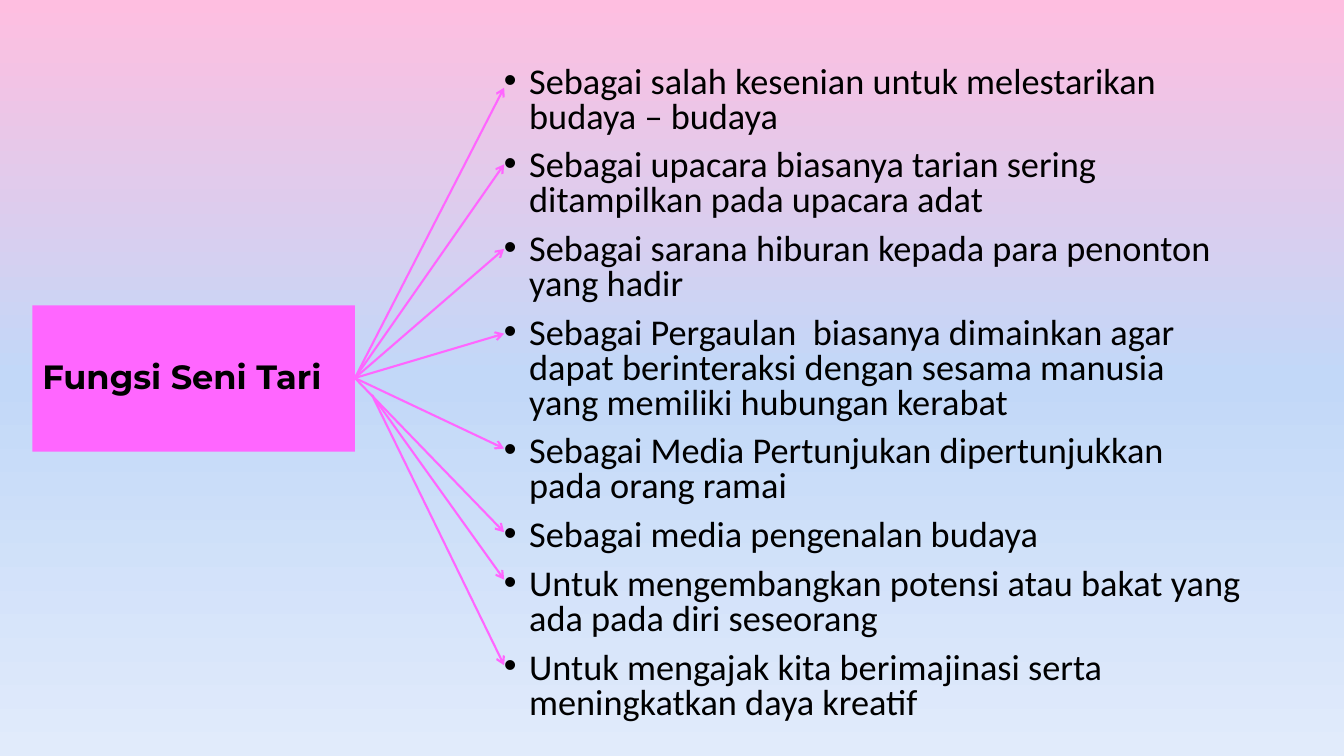
"""Build a slide that links a dance title to the list of its functions."""
import copy

import lxml.etree
import pptx
import pptx.dml.color
import pptx.enum.shapes
import pptx.enum.text
import pptx.oxml.ns
import pptx.util

PX = 9144
SLIDE_SIZE = (1333, 750)
TITLE_BOX = (32, 303, 320, 145)
LIST_BOX = (490, 61, 752, 672)

PINK = pptx.dml.color.RGBColor(0xFF, 0x66, 0xFF)
BLACK = pptx.dml.color.RGBColor(0x00, 0x00, 0x00)
BACKGROUND_STOPS = (
    (0, pptx.dml.color.RGBColor(0xFE, 0xBE, 0xE0)),
    (0.5, pptx.dml.color.RGBColor(0xC2, 0xD8, 0xF8)),
    (1, pptx.dml.color.RGBColor(0xE1, 0xEB, 0xFB)),
)

TITLE = "Fungsi Seni Tari"
FUNCTIONS = (
    "Sebagai salah kesenian untuk melestarikan budaya – budaya",
    "Sebagai upacara biasanya tarian sering ditampilkan pada upacara adat",
    "Sebagai sarana hiburan kepada para penonton yang hadir",
    "Sebagai Pergaulan  biasanya dimainkan agar dapat berinteraksi dengan "
    "sesama manusia yang memiliki hubungan kerabat",
    "Sebagai Media Pertunjukan dipertunjukkan pada orang ramai",
    "Sebagai media pengenalan budaya",
    "Untuk mengembangkan potensi atau bakat yang ada pada diri seseorang",
    "Untuk mengajak kita berimajinasi serta meningkatkan daya kreatif",
)
ARROW_END_X = 500
ARROW_END_YS = (87, 163, 247, 331, 445, 528, 575, 660)
LOWER_ARROWS = 2
LOWER_OFFSET = 17


def emu(*lengths):
    """Turn px lengths into EMU."""
    return [pptx.util.Emu(length * PX) for length in lengths]


def add_element(parent, tag, **attributes):
    """Append a drawing element with its attributes."""
    return lxml.etree.SubElement(parent, pptx.oxml.ns.qn(tag), attributes)


def style_run(run, font_name, size, bold=False):
    """Set the font of a run."""
    run.font.name = font_name
    run.font.size = pptx.util.Pt(size)
    run.font.bold = bold
    run.font.color.rgb = BLACK


def paint_background(slide):
    """Fill the slide with a vertical gradient of three colours."""
    fill = slide.background.fill
    fill.gradient()
    fill.gradient_angle = 270
    stop_list = slide.element.find(".//" + pptx.oxml.ns.qn("a:gsLst"))
    stop_list.append(copy.deepcopy(stop_list[-1]))
    for stop, (position, color) in zip(fill.gradient_stops, BACKGROUND_STOPS):
        stop.position = position
        stop.color.rgb = color


def place_title(slide, box):
    """Turn the title placeholder into the pink label."""
    shape = slide.shapes.title
    shape.left, shape.top, shape.width, shape.height = emu(*box)
    shape.fill.solid()
    shape.fill.fore_color.rgb = PINK
    text_frame = shape.text_frame
    text_frame.text = TITLE
    text_frame.vertical_anchor = pptx.enum.text.MSO_ANCHOR.MIDDLE
    paragraph = text_frame.paragraphs[0]
    paragraph.alignment = pptx.enum.text.PP_ALIGN.LEFT
    paragraph.line_spacing = 0.9
    style_run(paragraph.runs[0], "Montserrat", 24, bold=True)


def add_function_list(slide, box):
    """Add the bulleted list of functions."""
    text_frame = slide.shapes.add_textbox(*emu(*box)).text_frame
    text_frame.word_wrap = True
    text_frame.text = "\n".join(FUNCTIONS)
    indent = 25 * PX
    for paragraph in text_frame.paragraphs:
        paragraph.line_spacing = 0.8
        paragraph.space_before = pptx.util.Pt(10)
        style_run(paragraph.runs[0], "Calibri", 25.9)
        properties = paragraph._p.get_or_add_pPr()
        properties.set("marL", str(indent))
        properties.set("indent", str(-indent))
        add_element(properties, "a:buFont", typeface="Arial")
        add_element(properties, "a:buChar", char="•")


def add_arrows(slide, box):
    """Fan arrows out from the right edge of the label box."""
    left, top, width, height = box
    start_x, start_y = left + width, top + height // 2
    first_lower = len(ARROW_END_YS) - LOWER_ARROWS
    for index, end_y in enumerate(ARROW_END_YS):
        offset = LOWER_OFFSET if index >= first_lower else 0
        connector = slide.shapes.add_connector(
            pptx.enum.shapes.MSO_CONNECTOR.STRAIGHT,
            *emu(start_x + offset, start_y + offset, ARROW_END_X, end_y),
        )
        connector.line.color.rgb = PINK
        connector.line.width = pptx.util.Pt(1.5)
        add_element(connector.line._get_or_add_ln(), "a:tailEnd", type="arrow")
        add_element(connector._element.spPr, "a:effectLst")


def main():
    """Create the presentation and save it."""
    presentation = pptx.Presentation()
    presentation.slide_width, presentation.slide_height = emu(*SLIDE_SIZE)
    slide = presentation.slides.add_slide(presentation.slide_layouts[5])
    paint_background(slide)
    place_title(slide, TITLE_BOX)
    add_function_list(slide, LIST_BOX)
    add_arrows(slide, TITLE_BOX)
    presentation.save("out.pptx")


if __name__ == "__main__":
    main()
